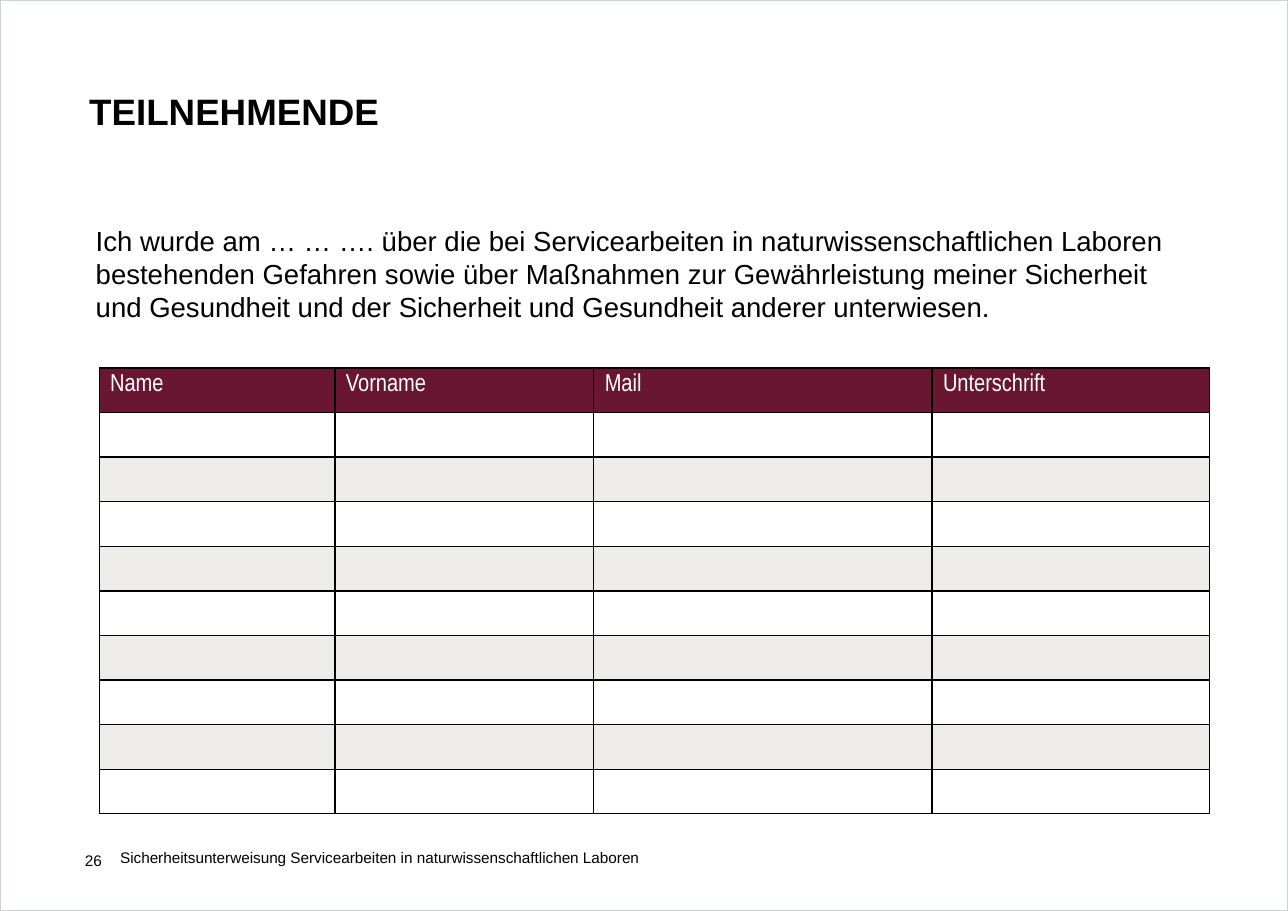
"""Build the participants slide with its sign-in table."""
from lxml import etree
from pptx import Presentation
from pptx.dml.color import RGBColor
from pptx.enum.shapes import MSO_SHAPE
from pptx.enum.text import MSO_ANCHOR, PP_ALIGN
from pptx.oxml.ns import qn
from pptx.util import Inches, Pt

BLACK = RGBColor(0x00, 0x00, 0x00)
WHITE = RGBColor(0xFF, 0xFF, 0xFF)
WINE = RGBColor(0x69, 0x16, 0x33)
SAND = RGBColor(0xEE, 0xEC, 0xE8)
FRAME = RGBColor(0xC9, 0xD2, 0xD5)

HEADERS = ["Name", "Vorname", "Mail", "Unterschrift"]
COL_WIDTHS = [2.14, 2.35, 3.07, 2.52]
ROWS = 10
DECLARATION = (
    "Ich wurde am … … …. über die bei Servicearbeiten in naturwissenschaftlichen "
    "Laboren bestehenden Gefahren sowie über Maßnahmen zur Gewährleistung meiner "
    "Sicherheit und Gesundheit und der Sicherheit und Gesundheit anderer unterwiesen."
)
FOOTER = "Sicherheitsunterweisung Servicearbeiten in naturwissenschaftlichen Laboren"


def style_text(p, size, color=BLACK, name="Arial", bold=False):
    for r in p.runs:
        r.font.size = Pt(size)
        r.font.name = name
        r.font.bold = bold
        r.font.color.rgb = color


def add_frame(slide, width, height):
    sp = slide.shapes.add_shape(MSO_SHAPE.RECTANGLE, 0, 0, width, height)
    sp.shadow.inherit = False
    sp.fill.background()
    sp.line.color.rgb = FRAME
    sp.line.width = Pt(1)


def set_title(slide, text):
    sp = slide.shapes.title
    sp.left, sp.top = Inches(0.81), Inches(0.61)
    sp.width, sp.height = Inches(5.89), Inches(0.7)
    tf = sp.text_frame
    tf.text = text
    tf.vertical_anchor = MSO_ANCHOR.TOP
    tf.margin_left = tf.margin_right = tf.margin_top = tf.margin_bottom = 0
    p = tf.paragraphs[0]
    p.alignment = PP_ALIGN.LEFT
    p.line_spacing = 1.5
    style_text(p, 24, bold=True)


def add_text(slide, box, text, size, anchor=MSO_ANCHOR.TOP, side_margin=0.0):
    sp = slide.shapes.add_textbox(*map(Inches, box))
    tf = sp.text_frame
    tf.word_wrap = True
    tf.vertical_anchor = anchor
    tf.margin_left = tf.margin_right = Inches(side_margin)
    tf.text = text
    style_text(tf.paragraphs[0], size)


def set_borders(cell, color, width):
    tcPr = cell._tc.get_or_add_tcPr()
    for side in ("lnL", "lnR", "lnT", "lnB"):
        ln = etree.SubElement(tcPr, qn(f"a:{side}"), w=str(Pt(width)))
        fill = etree.SubElement(ln, qn("a:solidFill"))
        etree.SubElement(fill, qn("a:srgbClr"), val=str(color))


def add_sign_in_table(slide):
    table = slide.shapes.add_table(
        ROWS, len(HEADERS), Inches(0.9), Inches(3.34),
        Inches(sum(COL_WIDTHS)), Inches(4.05),
    ).table
    for col, width in zip(table.columns, COL_WIDTHS):
        col.width = Inches(width)
    for i, row in enumerate(table.rows):
        for cell in row.cells:
            set_borders(cell, BLACK, 1)
            cell.fill.solid()
            cell.fill.fore_color.rgb = WINE if i == 0 else WHITE if i % 2 else SAND
    for cell, header in zip(table.rows[0].cells, HEADERS):
        cell.text = header
        style_text(cell.text_frame.paragraphs[0], 16, WHITE, "Arial Narrow")


def main():
    prs = Presentation()
    prs.slide_width, prs.slide_height = Inches(11.69), Inches(8.27)
    slide = prs.slides.add_slide(prs.slide_layouts[5])
    add_frame(slide, prs.slide_width, prs.slide_height)
    set_title(slide, "TEILNEHMENDE")
    add_text(slide, (0.77, 1.98, 10.08, 1.01), DECLARATION, 18, side_margin=0.1)
    add_sign_in_table(slide)
    add_text(slide, (0.77, 7.61, 0.31, 0.4), "26", 10, MSO_ANCHOR.MIDDLE)
    add_text(slide, (1.09, 7.52, 5.65, 0.4), FOOTER, 10, MSO_ANCHOR.BOTTOM)
    prs.save("out.pptx")


if __name__ == "__main__":
    main()
